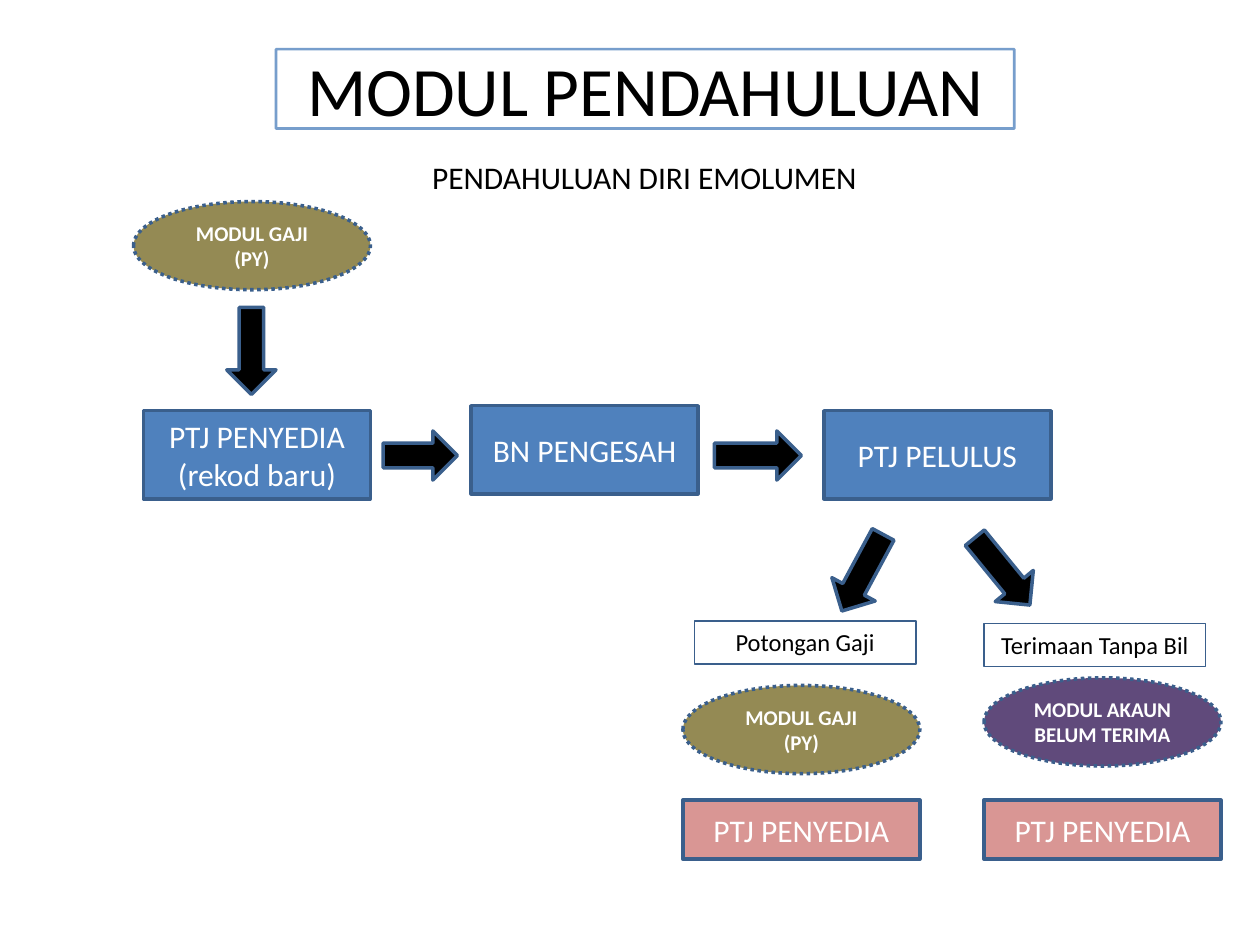
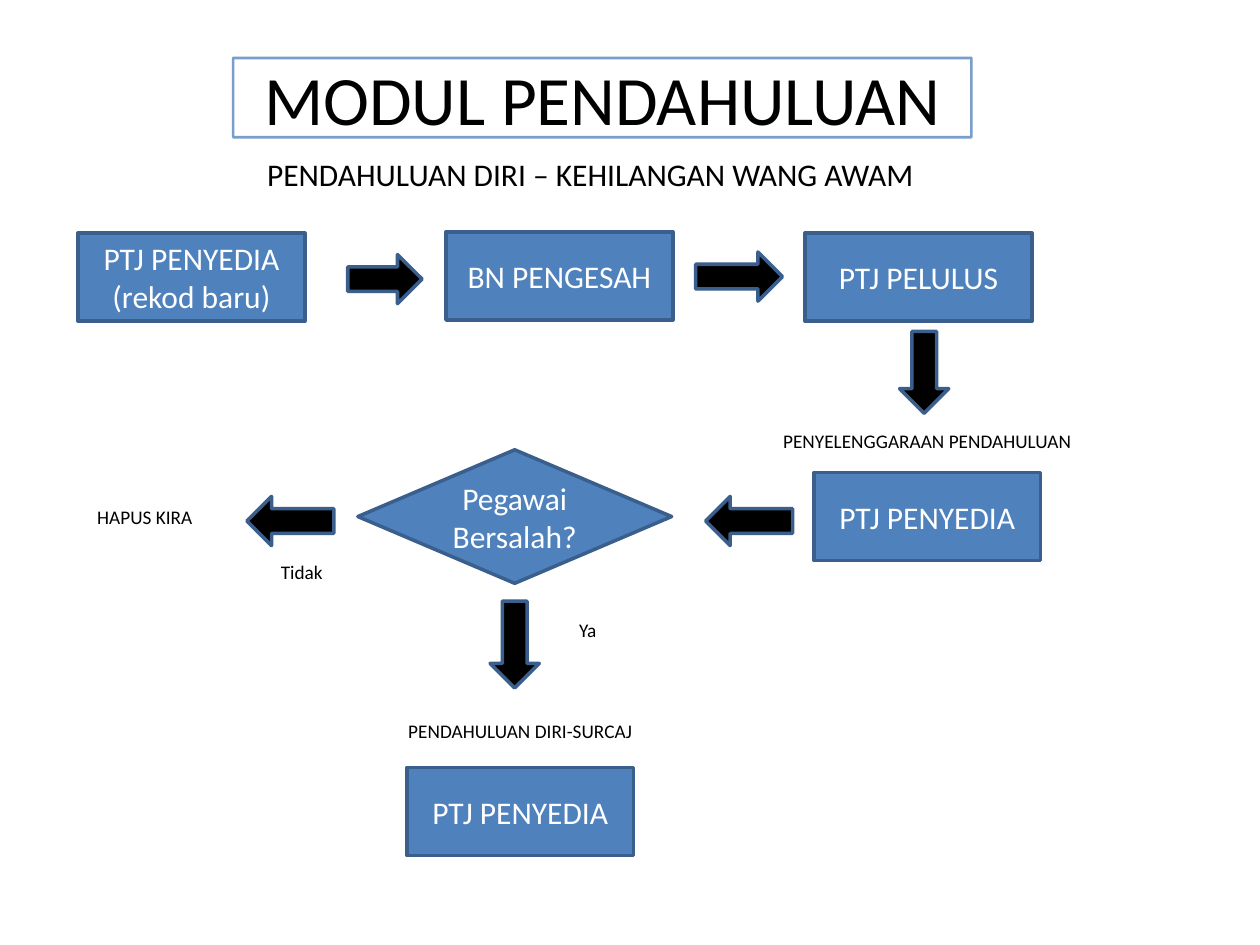
from dataclasses import dataclass

from lxml.etree import SubElement
from pptx import Presentation
from pptx.dml.color import RGBColor
from pptx.enum.dml import MSO_LINE
from pptx.enum.shapes import MSO_SHAPE
from pptx.enum.text import MSO_ANCHOR, MSO_AUTO_SIZE, PP_ALIGN
from pptx.oxml.ns import qn
from pptx.util import Inches, Pt


@dataclass(frozen=True)
class Theme:
    font: str = "Calibri"
    # Colours
    ink: str = "000000"
    paper: str = "FFFFFF"
    blue: str = "4F81BD"
    outline: str = "3A5F8C"
    olive: str = "948A54"
    purple: str = "604A7B"
    rose: str = "D99694"
    # Type sizes
    title: float = 39.6
    body: float = 18
    note: float = 14
    module: float = 12
    caption: float = 11


THEME = Theme()
WIDTH, HEIGHT = Inches(10), Inches(7.5)
COLUMNS, ROWS = 100, 75
STEP = (18, 7)
MODULE = (18.8, 7)
OFFICE = (18.8, 4.7)
NOTE = (17.6, 3.4)
ARROW_THICKNESS = 3.9


def assign(target, formats):
    for name, value in formats.items():
        setattr(target, name, value)


class FlowSlide:
    """One flow chart slide; lengths are columns and rows of the grid."""

    def __init__(self, deck, theme=THEME):
        self.theme = theme
        self.slide = deck.slides.add_slide(deck.slide_layouts[0])

    def place(self, column, row, columns, rows):
        return (round(WIDTH * column / COLUMNS), round(HEIGHT * row / ROWS),
                round(WIDTH * columns / COLUMNS), round(HEIGHT * rows / ROWS))

    def move(self, holder, *box):
        assign(holder, dict(zip(("left", "top", "width", "height"), self.place(*box))))

    def letter(self, shape, text, size, colour, bold=False,
               anchor=MSO_ANCHOR.MIDDLE, fit=MSO_AUTO_SIZE.NONE):
        frame = shape.text_frame
        frame.text = text
        assign(frame, {"word_wrap": True, "auto_size": fit, "vertical_anchor": anchor})
        for paragraph in frame.paragraphs:
            assign(paragraph, {"alignment": PP_ALIGN.CENTER, "space_before": Pt(0)})
            assign(paragraph.font, {"name": self.theme.font, "size": Pt(size), "bold": bold})
            paragraph.font.color.rgb = RGBColor.from_string(colour)

    def outline(self, shape, colour, width, dash=None):
        shape.line.color.rgb = RGBColor.from_string(colour)
        assign(shape.line, {"width": Pt(width), "dash_style": dash})

    def form(self, kind, box, fill=None, width=2, dash=None):
        shape = self.slide.shapes.add_shape(kind, *self.place(*box))
        shape.shadow.inherit = False
        if fill:
            shape.fill.solid()
            shape.fill.fore_color.rgb = RGBColor.from_string(fill)
        else:
            shape.fill.background()
        self.outline(shape, self.theme.outline, width, dash)
        return shape

    def heading(self, column, row, text):
        title = self.slide.shapes.title
        self.move(title, column, row, 58.6, 6.3)
        self.letter(title, text, self.theme.title, self.theme.ink)
        self.outline(title, self.theme.blue, 1.5, MSO_LINE.SOLID)
        border = next(title.element.iter(qn("a:ln")))
        colour = next(border.iter(qn("a:srgbClr")))
        SubElement(colour, qn("a:alpha"), val="76000")

    def subheading(self, column, row, columns, text):
        subtitle = self.slide.placeholders[1]
        self.move(subtitle, column, row, columns, 4)
        self.letter(subtitle, text, self.theme.body, self.theme.ink, anchor=MSO_ANCHOR.TOP)

    def step(self, column, row, text, size=STEP, fill=THEME.blue, kind=MSO_SHAPE.RECTANGLE):
        box = self.form(kind, (column, row, *size), fill)
        self.letter(box, text, self.theme.body, self.theme.paper)

    def module(self, column, row, text, fill):
        oval = self.form(MSO_SHAPE.OVAL, (column, row, *MODULE), fill, dash=MSO_LINE.ROUND_DOT)
        self.letter(oval, text, self.theme.module, self.theme.paper, bold=True)

    def note(self, column, row, text):
        box = self.form(MSO_SHAPE.RECTANGLE, (column, row, *NOTE), width=0.75)
        self.letter(box, text, self.theme.note, self.theme.ink,
                    anchor=MSO_ANCHOR.TOP, fit=MSO_AUTO_SIZE.SHAPE_TO_FIT_TEXT)

    def caption(self, column, row, columns, text):
        label = self.slide.shapes.add_textbox(*self.place(column, row, columns, 2.9))
        self.letter(label, text, self.theme.caption, self.theme.ink,
                    anchor=MSO_ANCHOR.TOP, fit=MSO_AUTO_SIZE.SHAPE_TO_FIT_TEXT)

    def arrow(self, centre, middle, angle=0, length=6.9):
        box = (centre - length / 2, middle - ARROW_THICKNESS / 2, length, ARROW_THICKNESS)
        self.form(MSO_SHAPE.RIGHT_ARROW, box, self.theme.ink).rotation = angle


def build_emolument(deck):
    page = FlowSlide(deck)
    page.heading(21.9, 3.9, "MODUL PENDAHULUAN")
    page.subheading(31.8, 12, 38.7, "PENDAHULUAN DIRI EMOLUMEN")

    # Payroll module feeds the approval chain
    page.module(10.6, 16, "MODUL GAJI (PY)", THEME.olive)
    page.arrow(19.95, 27.85, 90)
    page.step(11.4, 32.6, "PTJ PENYEDIA\n(rekod baru)")
    page.arrow(33.35, 36.15, length=5.9)
    page.step(37.4, 32.2, "BN PENGESAH")
    page.arrow(60.15, 36.15)
    page.step(65.4, 32.6, "PTJ PELULUS")

    # Two ways of recovery
    page.arrow(68.45, 45.45, 118.3)
    page.arrow(79.55, 45.35, 50.7)
    page.note(55.1, 49.3, "Potongan Gaji")
    page.note(78.1, 49.5, "Terimaan Tanpa Bil")
    page.module(54.2, 54.4, "MODUL GAJI (PY)", THEME.olive)
    page.module(78.1, 53.8, "MODUL AKAUN BELUM TERIMA", THEME.purple)
    for column in (54.2, 78.1):
        page.step(column, 63.5, "PTJ PENYEDIA", OFFICE, THEME.rose)


def build_public_money_loss(deck):
    page = FlowSlide(deck)
    page.heading(18.5, 4.6, "MODUL PENDAHULUAN")
    page.subheading(18.5, 11.8, 56.7, "PENDAHULUAN DIRI – KEHILANGAN WANG AWAM")

    # Approval chain
    page.step(6.2, 18.5, "PTJ PENYEDIA\n(rekod baru)")
    page.arrow(30.55, 22.15, length=5.9)
    page.step(35.4, 18.4, "BN PENGESAH")
    page.arrow(58.65, 21.95)
    page.step(63.9, 18.5, "PTJ PELULUS")
    page.arrow(73.35, 29.55, 90, 6.5)

    # Maintenance of the advance, then the decision
    page.caption(58.6, 33.6, 30, "PENYELENGGARAAN PENDAHULUAN")
    page.step(64.6, 37.5, "PTJ PENYEDIA")
    page.arrow(59.45, 41.35, 180)
    page.step(28.4, 35.7, "Pegawai Bersalah?", (24.9, 10.6),
              kind=MSO_SHAPE.FLOWCHART_DECISION)

    # Not guilty: the advance is cancelled
    page.arrow(23.05, 41.35, 180)
    page.caption(17.2, 44, 13.5, "Tidak")
    page.caption(4.3, 39.6, 14.4, "HAPUS KIRA")

    # Guilty: surcharge
    page.arrow(40.85, 51.15, 90)
    page.caption(39.9, 48.6, 13.5, "Ya")
    page.caption(26.3, 56.6, 30, "PENDAHULUAN DIRI-SURCAJ")
    page.step(32.3, 60.9, "PTJ PENYEDIA")


def main():
    deck = Presentation()
    assign(deck, {"slide_width": WIDTH, "slide_height": HEIGHT})
    build_emolument(deck)
    build_public_money_loss(deck)
    deck.save("out.pptx")


if __name__ == "__main__":
    main()
